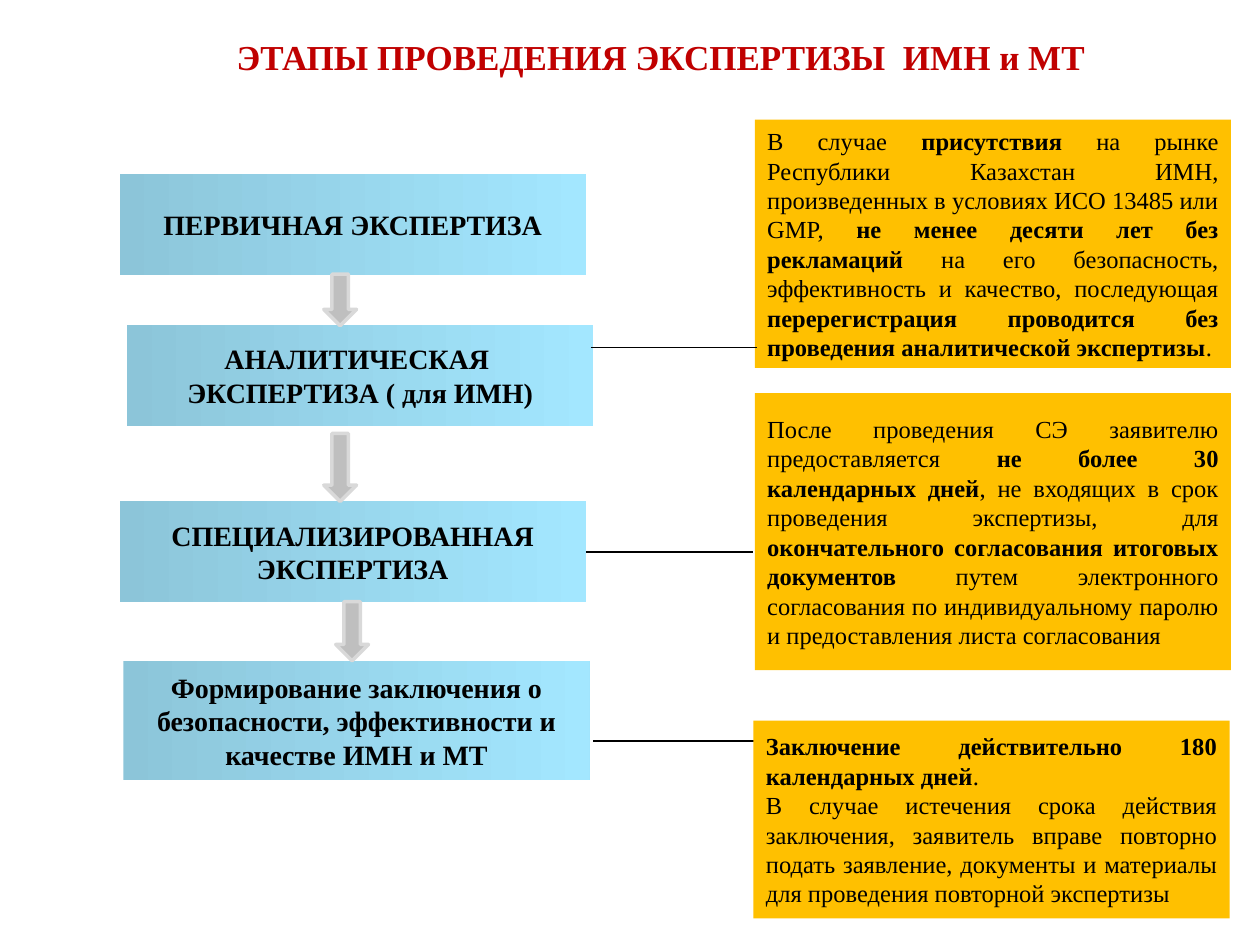
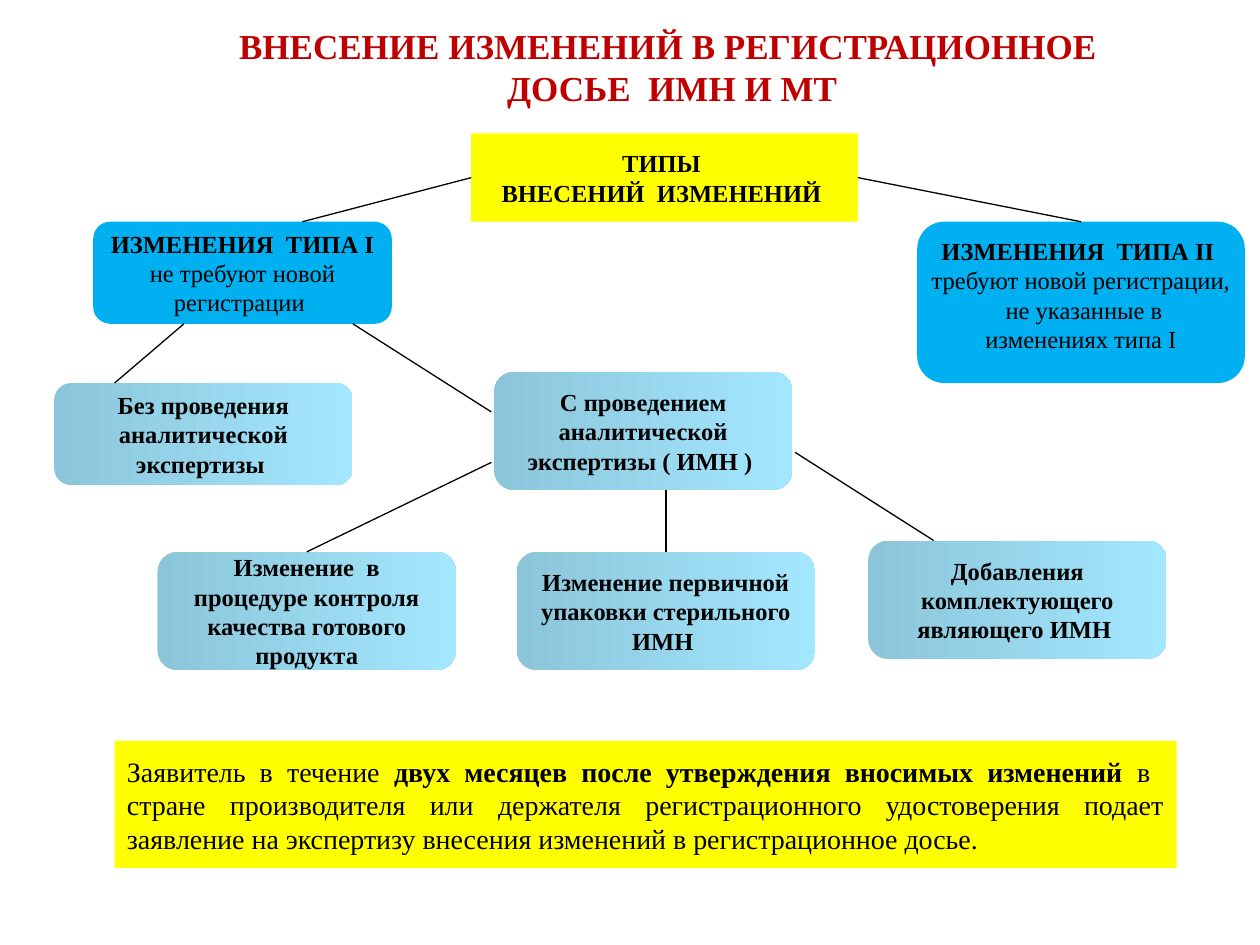
from dataclasses import dataclass
from lxml.etree import SubElement
from pptx import Presentation
from pptx.dml.color import RGBColor
from pptx.enum.shapes import MSO_CONNECTOR, MSO_SHAPE
from pptx.enum.text import MSO_ANCHOR, MSO_AUTO_SIZE, PP_ALIGN
from pptx.oxml.ns import qn
from pptx.util import Inches, Pt

COLS, ROWS = 100, 75
TOP, LEFT, RIGHT = 0, 1, 3


@dataclass(frozen=True)
class Theme:
    font: str = "Times New Roman"
    ink: str = "000000"
    head: str = "C00000"
    step: tuple = ("8CC5D9", "A3E7FF")
    note: str = "FFC000"
    key: str = "FFFF00"
    kind: str = "00B0F0"
    arrow: str = "BFBFBF"
    edge: str = "D9D9D9"
    title: float = 20
    large: float = 16
    small: float = 14
    rule: float = 0.75
    rim: float = 2


class Deck:
    def __init__(self, theme):
        self.theme = theme
        self.file = Presentation()
        self.file.slide_width, self.file.slide_height = Inches(10), Inches(7.5)
        self.slide = None

    def place(self, col, row):
        return (int(self.file.slide_width * col / COLS),
                int(self.file.slide_height * row / ROWS))

    def style(self, par, size, color, align, bold=None):
        par.alignment = align
        par.font.name = self.theme.font
        par.font.size = Pt(size)
        par.font.color.rgb = RGBColor.from_string(color)
        par.font.bold = bold

    def start(self, text, area):
        self.slide = self.file.slides.add_slide(self.file.slide_layouts[5])
        title = self.slide.shapes.title
        title.left, title.top = self.place(*area[:2])
        title.width, title.height = self.place(*area[2:])
        frame = title.text_frame
        frame.text = text
        frame.auto_size = MSO_AUTO_SIZE.NONE
        frame.vertical_anchor = MSO_ANCHOR.MIDDLE
        self.style(frame.paragraphs[0], self.theme.title, self.theme.head,
                   PP_ALIGN.CENTER, True)

    def shape(self, form, area, paint):
        item = self.slide.shapes.add_shape(
            form, *self.place(*area[:2]), *self.place(*area[2:]))
        item.shadow.inherit = False
        item.line.fill.background()
        if isinstance(paint, tuple):
            item.fill.gradient()
            item.fill.gradient_angle = 0
            for stop, tone in zip(item.fill.gradient_stops, paint):
                stop.color.rgb = RGBColor.from_string(tone)
        else:
            item.fill.solid()
            item.fill.fore_color.rgb = RGBColor.from_string(paint)
        return item

    def box(self, text, area, paint, size, align=PP_ALIGN.CENTER,
            form=MSO_SHAPE.RECTANGLE, wrap=True, anchor=MSO_ANCHOR.MIDDLE):
        item = self.shape(form, area, paint)
        frame = item.text_frame
        frame.word_wrap = wrap
        frame.vertical_anchor = anchor
        for n, line in enumerate(text.split("\n")):
            par = frame.add_paragraph() if n else frame.paragraphs[0]
            self.style(par, size, self.theme.ink, align)
            for k, part in enumerate(line.split("*")):
                if part:
                    run = par.add_run()
                    run.text = part
                    run.font.bold = k % 2 == 1
        return item

    def step(self, text, area):
        return self.box(f"*{text}*", area, self.theme.step, self.theme.large)

    def note(self, text, area):
        return self.box(text, area, self.theme.note, self.theme.small,
                        PP_ALIGN.JUSTIFY)

    def card(self, text, area, paint=None, **more):
        return self.box(text, area, paint or self.theme.step,
                        self.theme.small,
                        form=MSO_SHAPE.ROUNDED_RECTANGLE, **more)

    def arrow(self, area):
        item = self.shape(MSO_SHAPE.DOWN_ARROW, area, self.theme.arrow)
        item.line.color.rgb = RGBColor.from_string(self.theme.edge)
        item.line.width = Pt(self.theme.rim)

    def line(self, start, end, tail=None, head=None):
        item = self.slide.shapes.add_connector(
            MSO_CONNECTOR.STRAIGHT, *self.place(*start), *self.place(*end))
        item.line.color.rgb = RGBColor.from_string(self.theme.ink)
        item.line.width = Pt(self.theme.rule)
        SubElement(item._element.spPr, qn("a:effectLst"))
        if tail:
            item.begin_connect(*tail)
        if head:
            item.end_connect(*head)


def stages(deck):
    deck.start("ЭТАПЫ ПРОВЕДЕНИЯ ЭКСПЕРТИЗЫ  ИМН и МТ ", (11.4, 2.1, 82.8, 4.7))
    deck.step("ПЕРВИЧНАЯ ЭКСПЕРТИЗА", (9.5, 13.8, 37, 8))
    deck.step("АНАЛИТИЧЕСКАЯ  ЭКСПЕРТИЗА ( для ИМН)", (10.1, 25.8, 37, 8))
    expert = deck.step("СПЕЦИАЛИЗИРОВАННАЯ ЭКСПЕРТИЗА", (9.5, 39.8, 37, 8))
    deck.step("Формирование заключения о безопасности, эффективности и "
              "качестве ИМН и МТ", (9.8, 52.5, 37, 9.4))
    for col, row, high in ((25.7, 21.75, 4.1), (25.7, 34.4, 5.4),
                           (26.65, 47.75, 4.7)):
        deck.arrow((col, row, 2.6, high))

    deck.note("В случае *присутствия* на рынке Республики Казахстан ИМН, "
              "произведенных в условиях ИСО 13485 или GMP, *не менее десяти "
              "лет без рекламаций *на его безопасность, эффективность и "
              "качество, последующая *перерегистрация проводится без "
              "проведения аналитической экспертизы*.", (59.9, 9.5, 37.8, 19.7))
    deck.note("После проведения СЭ заявителю предоставляется *не более 30 "
              "календарных дней*, не входящих в срок проведения экспертизы, "
              "для *окончательного согласования итоговых документов *путем "
              "электронного согласования по индивидуальному паролю и "
              "предоставления листа согласования", (59.9, 31.2, 37.8, 22))
    deck.line((46.9, 27.6), (60.1, 27.6))
    deck.line((46.5, 43.8), (59.8, 43.8), tail=(expert, RIGHT))
    deck.line((47.1, 58.8), (60.5, 58.8))
    deck.note("*Заключение действительно 180 календарных дней*. \n"
              "В случае истечения срока действия заключения, заявитель вправе "
              "повторно подать заявление, документы и материалы для "
              "проведения повторной экспертизы", (59.8, 57.2, 37.8, 15.7))


def changes(deck):
    theme = deck.theme
    deck.start("ВНЕСЕНИЕ ИЗМЕНЕНИЙ В РЕГИСТРАЦИОННОЕ \vДОСЬЕ  ИМН И МТ",
               (11.7, 2.1, 83.3, 6.3))
    types = deck.box("*ТИПЫ *\n*ВНЕСЕНИЙ  ИЗМЕНЕНИЙ *", (37.4, 10.6, 30.7, 7),
                     theme.key, theme.small, wrap=False)
    deck.card("*ИЗМЕНЕНИЯ  ТИПА I *\nне требуют новой регистрации ",
              (7.4, 17.6, 23.7, 8.1), theme.kind)
    second = deck.card("*ИЗМЕНЕНИЯ  ТИПА II *\nтребуют новой регистрации,\n"
                       " не указанные в\n изменениях типа I ",
                       (72.8, 17.6, 26, 12.8), theme.kind, wrap=False,
                       anchor=MSO_ANCHOR.TOP)
    deck.card("*Без проведения аналитической экспертизы *",
              (4.3, 30.4, 23.7, 8.1))
    deck.card("*С проведением аналитической экспертизы ( ИМН ) *",
              (39.2, 29.5, 23.7, 9.4))
    check, pack, _ = [
        deck.card(f"*{text}*", (col, row, 23.7, 9.4)) for text, col, row in (
            ("Изменение  в процедуре контроля качества готового продукта",
             12.5, 43.8),
            ("Изменение первичной упаковки стерильного ИМН ", 41, 43.8),
            ("Добавления комплектующего являющего ИМН ", 68.9, 42.9))]

    deck.line((24, 17.6), (37.4, 14.1), head=(types, LEFT))
    deck.line((68.1, 14.1), (85.8, 17.6), (types, RIGHT), (second, TOP))
    deck.line((9.1, 30.4), (14.6, 25.7))
    deck.line((28, 25.7), (39, 32.7))
    deck.line((63.1, 35.9), (74.1, 42.9))
    deck.line((52.85, 38.9), (52.85, 43.8), head=(pack, TOP))
    deck.line((39, 36.7), (24.35, 43.8), head=(check, TOP))
    deck.box("Заявитель в течение *двух месяцев после утверждения вносимых "
             "изменений *в  стране производителя или держателя "
             "регистрационного удостоверения подает заявление на экспертизу "
             "внесения изменений в регистрационное досье.",
             (9.1, 58.8, 84.3, 10.1), theme.key, theme.large,
             PP_ALIGN.JUSTIFY)


def main():
    deck = Deck(Theme())
    stages(deck)
    changes(deck)
    deck.file.save("out.pptx")


if __name__ == "__main__":
    main()
